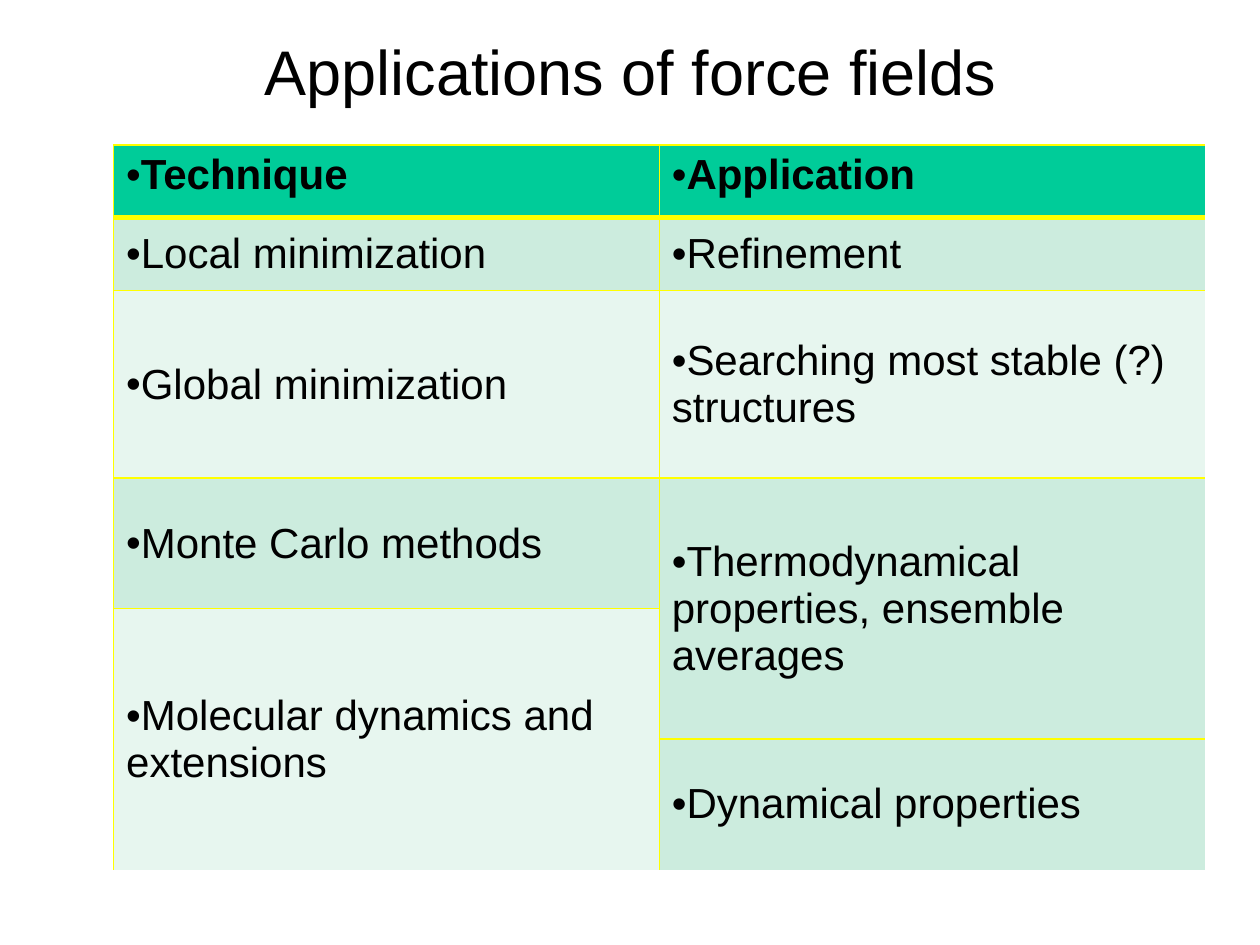
"""Build the slide on applications of force fields."""
from dataclasses import dataclass

from lxml import etree
from pptx import Presentation
from pptx.dml.color import RGBColor
from pptx.enum.text import MSO_ANCHOR, MSO_AUTO_SIZE, PP_ALIGN
from pptx.oxml.ns import qn
from pptx.util import Cm, Pt

TOP, MIDDLE = MSO_ANCHOR.TOP, MSO_ANCHOR.MIDDLE
CENTER = PP_ALIGN.CENTER
FIT_SHAPE = MSO_AUTO_SIZE.SHAPE_TO_FIT_TEXT


@dataclass(frozen=True)
class Theme:
    """Colours and type sizes."""
    font: str = "Arial"
    ink: str = "000000"
    header: str = "00CC99"
    dark: str = "CCECDE"
    light: str = "E7F6EF"
    rule: str = "FFFF00"
    title_size: int = 36
    body_size: int = 24
    thin: int = 1
    thick: int = 3


THEME = Theme()
COLUMN_WIDTH = 11
ROW_HEIGHTS = (1.46, 1.48, 3.78, 2.63, 2.63, 2.63)
CELLS = (
    (0, 0, 1, "Technique", THEME.header),
    (0, 1, 1, "Application", THEME.header),
    (1, 0, 1, "Local minimization", THEME.dark),
    (1, 1, 1, "Refinement", THEME.dark),
    (2, 0, 1, "Global minimization", THEME.light),
    (2, 1, 1, "Searching most stable (?) structures", THEME.light),
    (3, 0, 1, "Monte Carlo methods", THEME.dark),
    (3, 1, 2, "Thermodynamical properties, ensemble averages", THEME.dark),
    (4, 0, 2, "Molecular dynamics and extensions", THEME.light),
    (5, 1, 1, "Dynamical properties", THEME.dark),
)


def add_span(para, text, size, bold=False):
    """Add one styled run to a paragraph."""
    span = para.add_run()
    span.text = text
    span.font.name = THEME.font
    span.font.size = Pt(size)
    span.font.bold = bold
    span.font.color.rgb = RGBColor.from_string(THEME.ink)


def add_title(page, text):
    """Add the centred title."""
    box = page.shapes.add_textbox(Cm(0.51), Cm(0.53), Cm(24.41), Cm(1.8))
    frame = box.text_frame
    frame.word_wrap = True
    frame.auto_size = FIT_SHAPE
    para = frame.paragraphs[0]
    para.alignment = CENTER
    add_span(para, text, THEME.title_size)


def add_bullet(para):
    """Put an unindented bullet before a paragraph."""
    properties = para._p.get_or_add_pPr()
    properties.set("marL", "0")
    properties.set("indent", "0")
    etree.SubElement(properties, qn("a:buFont"), typeface=THEME.font)
    etree.SubElement(properties, qn("a:buChar"), char="•")


def set_border(cell, side, points):
    """Draw one cell edge, or clear it when the width is zero."""
    properties = cell._tc.get_or_add_tcPr()
    line = etree.SubElement(properties, qn(f"a:ln{side}"), w=str(Pt(points)))
    if points:
        fill = etree.SubElement(line, qn("a:solidFill"))
        etree.SubElement(fill, qn("a:srgbClr"), val=THEME.rule)
    else:
        etree.SubElement(line, qn("a:noFill"))


def style_cell(cell, row, column, first, last, color):
    """Set the edges and fill of one grid cell within its merged block."""
    below = THEME.thick if row == 0 else THEME.thin
    beside = THEME.thin if column == 0 else 0
    set_border(cell, "L", beside)
    set_border(cell, "R", beside)
    set_border(cell, "T", THEME.thin if row == first else 0)
    set_border(cell, "B", below if last < len(ROW_HEIGHTS) - 1 else 0)
    cell.fill.solid()
    cell.fill.fore_color.rgb = RGBColor.from_string(color)


def fill_cell(table, row, column, rows, text, color):
    """Write a cell and merge it downwards where it spans rows."""
    last = row + rows - 1
    for index in range(row, last + 1):
        style_cell(table.cell(index, column), index, column, row, last, color)
    cell = table.cell(row, column)
    if rows > 1:
        cell.merge(table.cell(last, column))
    cell.vertical_anchor = TOP if row == 0 else MIDDLE
    para = cell.text_frame.paragraphs[0]
    add_bullet(para)
    add_span(para, text, THEME.body_size, bold=row == 0)


def add_technique_table(page):
    """Add the table of techniques and their applications."""
    frame = page.shapes.add_table(
        len(ROW_HEIGHTS), 2, Cm(2.29), Cm(2.92),
        Cm(2 * COLUMN_WIDTH), Cm(sum(ROW_HEIGHTS)))
    table = frame.table
    for column in table.columns:
        column.width = Cm(COLUMN_WIDTH)
    for row, height in zip(table.rows, ROW_HEIGHTS):
        row.height = Cm(height)
    for entry in CELLS:
        fill_cell(table, *entry)


def main():
    """Build and save the deck."""
    deck = Presentation()
    deck.slide_width, deck.slide_height = Cm(25.4), Cm(19.05)
    page = deck.slides.add_slide(deck.slide_layouts[6])
    add_title(page, "Applications of force fields")
    add_technique_table(page)
    deck.save("out.pptx")


if __name__ == "__main__":
    main()
